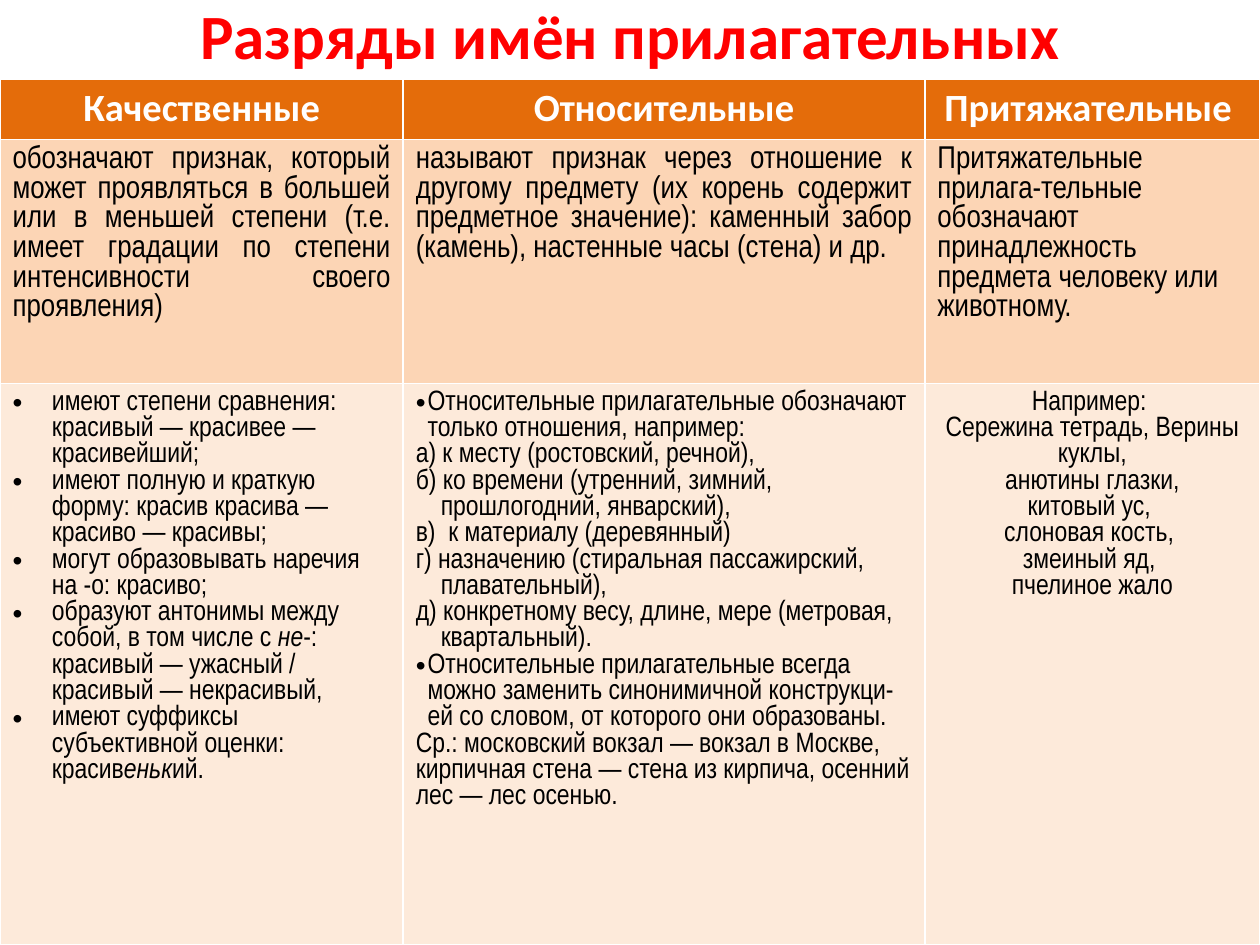
from lxml import etree
from pptx import Presentation
from pptx.dml.color import RGBColor
from pptx.enum import text
from pptx.oxml.ns import qn
from pptx.util import Pt

ALIGN = text.PP_ALIGN
HEADING_FONT, BODY_FONT = "Calibri", "Arial Narrow"
BULLET, LETTERED, PLAIN = "bullet", "lettered", "plain"

HEADINGS = ["Качественные", "Относительные", "Притяжательные "]
DEFINITIONS = [
    ("обозначают признак, который может проявляться в большей или в меньшей "
     "степени (т.е. имеет градации по степени интенсивности своего проявления)",
     ALIGN.JUSTIFY),
    ("называют признак через отношение к другому предмету (их корень содержит "
     "предметное значение): каменный забор (камень), настенные часы (стена) и др.",
     ALIGN.JUSTIFY),
    ("Притяжательные прилага-тельные обозначают принадлежность предмета "
     "человеку или животному.", ALIGN.LEFT),
]
# Underscores enclose italic spans
QUALITIES = [
    "имеют степени сравнения: красивый — красивее — красивейший;",
    "имеют полную и краткую форму: красив красива — красиво — красивы;",
    "могут образовывать наречия на -о: красиво;",
    "образуют антонимы между собой, в том числе с _не_-: "
    "красивый — ужасный / красивый — некрасивый,",
    "имеют суффиксы субъективной оценки: красив_еньк_ий.",
]
RELATIONS = [
    (BULLET, "Относительные прилагательные обозначают только отношения, например:"),
    (LETTERED, "а) к месту (ростовский, речной),"),
    (LETTERED, "б) ко времени (утренний, зимний, прошлогодний, январский),"),
    (LETTERED, "в)  к материалу (деревянный)"),
    (LETTERED, "г) назначению (стиральная пассажирский, плавательный),"),
    (LETTERED, "д) конкретному весу, длине, мере (метровая, квартальный)."),
    (BULLET, "Относительные прилагательные всегда можно заменить синонимичной "
             "конструкци-ей со словом, от которого они образованы."),
    (PLAIN, "Ср.: московский вокзал — вокзал в Москве, кирпичная стена — "
            "стена из кирпича, осенний лес — лес осенью."),
]
RELATION_INDENTS = {BULLET: 6.75, LETTERED: 14.25, PLAIN: 0}
POSSESSIVES = [
    "Например: ", "Сережина тетрадь, Верины куклы,", "анютины глазки,",
    "китовый ус, ", "слоновая кость, ", "змеиный яд, ", "пчелиное жало",
]


def color(value):
    return RGBColor.from_string(value)


def set_indent(para, indent, bullet):
    """Give a paragraph a hanging indent, with or without a bullet."""
    props = para._p.get_or_add_pPr()
    props.set("marL", str(Pt(indent)))
    props.set("indent", str(-Pt(indent)))
    if bullet:
        etree.SubElement(props, qn("a:buFont")).set("typeface", "Arial")
        etree.SubElement(props, qn("a:buChar")).set("char", "•")


def write(para, content, size, font=BODY_FONT, fill="000000", bold=False,
          align=ALIGN.LEFT):
    para.alignment = align
    for index, part in enumerate(content.split("_")):
        span = para.add_run()
        span.text = part
        span.font.name, span.font.size = font, Pt(size)
        span.font.bold, span.font.italic = bold, index % 2 == 1
        span.font.color.rgb = color(fill)


def write_list(cell, items, align=ALIGN.LEFT):
    """Fill a cell with (text, indent, bullet) items."""
    frame = cell.text_frame
    for index, (content, indent, bullet) in enumerate(items):
        para = frame.add_paragraph() if index else frame.paragraphs[0]
        if indent:
            set_indent(para, indent, bullet)
        write(para, content, 16, align=align)


def place_title(page, left, top, width, height):
    title = page.shapes.title
    title.left, title.top = Pt(left), Pt(top)
    title.width, title.height = Pt(width), Pt(height)
    frame = title.text_frame
    frame.auto_size = text.MSO_AUTO_SIZE.NONE
    frame.vertical_anchor = text.MSO_ANCHOR.MIDDLE
    write(frame.paragraphs[0], "Разряды имён прилагательных", 36,
          HEADING_FONT, "FF0000", True, ALIGN.CENTER)


def place_table(page, left, top, width, height):
    table = page.shapes.add_table(3, 3, Pt(left), Pt(top), Pt(width), Pt(height)).table
    for column, share in zip(table.columns, (0.32, 0.414, 0.266)):
        column.width = Pt(width * share)
    heading_height, definition_height = 34.75, 139.5
    row_heights = (heading_height, definition_height,
                   height - heading_height - definition_height)
    for row, row_height, fill in zip(table.rows, row_heights,
                                     ("E46C0A", "FCD5B5", "FDEADA")):
        row.height = Pt(row_height)
        for cell in row.cells:
            cell.fill.solid()
            cell.fill.fore_color.rgb = color(fill)

    # Headings and definitions
    for index, heading in enumerate(HEADINGS):
        write(table.cell(0, index).text_frame.paragraphs[0], heading, 22,
              HEADING_FONT, "FFFFFF", True, ALIGN.CENTER)
    for index, (definition, align) in enumerate(DEFINITIONS):
        write(table.cell(1, index).text_frame.paragraphs[0], definition, 18, align=align)

    # Features and examples
    write_list(table.cell(2, 0), [(item, 22.5, True) for item in QUALITIES])
    write_list(table.cell(2, 1), [(item, RELATION_INDENTS[kind], kind == BULLET)
                                  for kind, item in RELATIONS])
    write_list(table.cell(2, 2), [(item, 0, False) for item in POSSESSIVES], ALIGN.CENTER)


def main():
    deck = Presentation()
    deck.slide_width, deck.slide_height = Pt(720), Pt(540)
    page = deck.slides.add_slide(deck.slide_layouts[5])
    place_title(page, 54, 0, 612, 39)
    place_table(page, 0, 45, 720, 495)
    deck.save("out.pptx")


if __name__ == "__main__":
    main()
